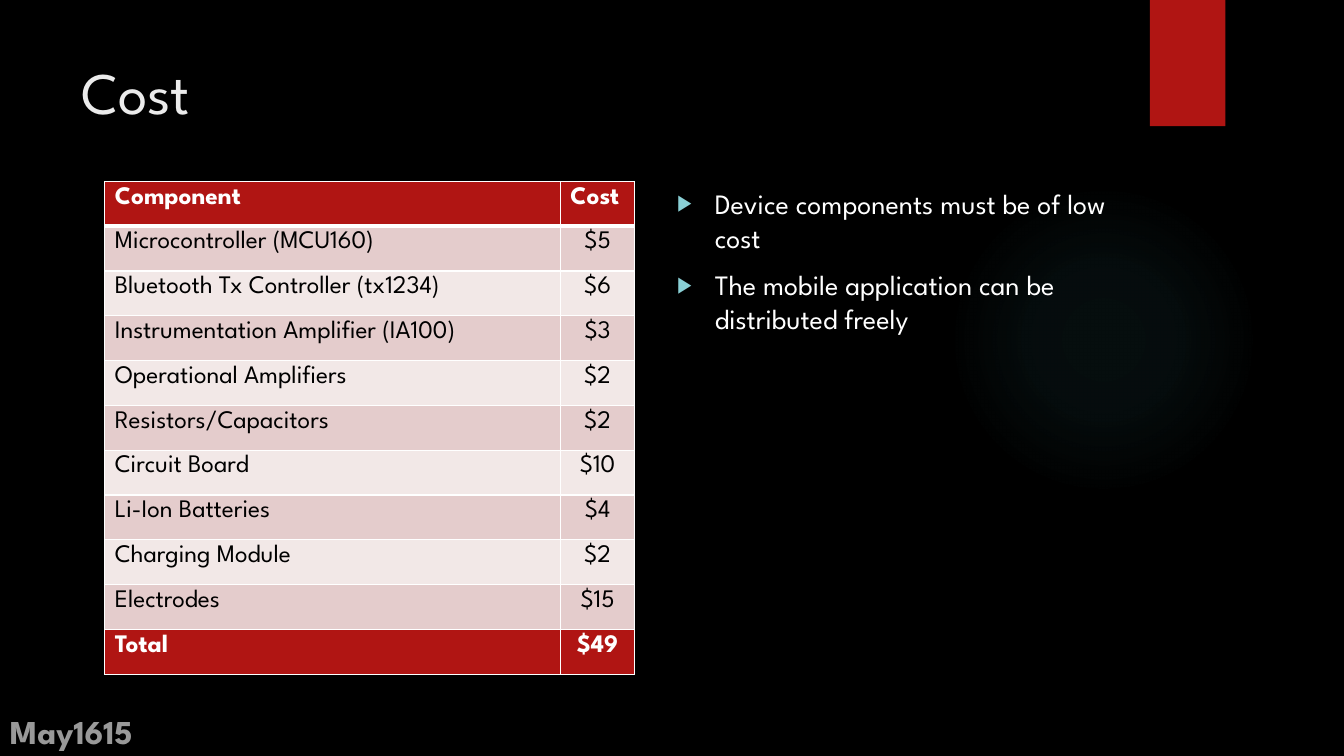
from lxml import etree
from pptx import Presentation
from pptx.dml.color import RGBColor
from pptx.enum.shapes import MSO_SHAPE as Shape
from pptx.enum.text import MSO_ANCHOR as Anchor, MSO_AUTO_SIZE as AutoSize, PP_ALIGN as Align
from pptx.oxml import parse_xml
from pptx.oxml.ns import nsdecls, qn
from pptx.util import Cm, Pt

# Content
TITLE = "Cost"
POINTS = [
    "Device components must be of low cost",
    "The mobile application can be distributed freely",
]
TEAM = "May1615"
HEADER = ("Component", "Cost")
COSTS = [
    ("Microcontroller (MCU160)", 5),
    ("Bluetooth Tx Controller (tx1234)", 6),
    ("Instrumentation Amplifier (IA100)", 3),
    ("Operational Amplifiers", 2),
    ("Resistors/Capacitors", 2),
    ("Circuit Board", 10),
    ("Li-Ion Batteries", 4),
    ("Charging Module", 2),
    ("Electrodes", 15),
]
TOTAL = sum(cost for _, cost in COSTS)
ROWS = [HEADER, *((name, f"${cost}") for name, cost in COSTS), ("Total", f"${TOTAL}")]

# Style
FONT = "League Spartan"
BLACK, WHITE, RED = "000000", "FFFFFF", "B01513"
BANDS = ("F2E8E7", "E4CCCC")
TABLE_TOP, ROW_HEIGHT = 4.57, 1.13
COLUMN_WIDTHS = (11.48, 1.88)


def colour(code):
    return RGBColor.from_string(code)


def place(shape, left, top, width, height):
    shape.left, shape.top = Cm(left), Cm(top)
    shape.width, shape.height = Cm(width), Cm(height)


def style(para, size, code, bold=False):
    for span in para.runs:
        span.font.name = FONT
        span.font.size = Pt(size)
        span.font.bold = bold
        span.font.color.rgb = colour(code)


def add_bullet(para):
    props = para._p.get_or_add_pPr()
    props.set("marL", str(Cm(0.95)))
    props.set("indent", str(-Cm(0.95)))
    for xml in (
        f'<a:buClr {nsdecls("a")}><a:srgbClr val="8AD0D6"/></a:buClr>',
        f'<a:buSzPct {nsdecls("a")} val="80000"/>',
        f'<a:buChar {nsdecls("a")} char="▶"/>',
    ):
        props.append(parse_xml(xml))


def add_border(cell, side, points):
    cell._tc.get_or_add_tcPr().append(parse_xml(
        f'<a:ln{side} {nsdecls("a")} w="{Pt(points)}"><a:solidFill>'
        f'<a:srgbClr val="{WHITE}"/></a:solidFill></a:ln{side}>'))


def add_decoration(page, kind, *position):
    shape = page.shapes.add_shape(kind, 0, 0, 0, 0)
    place(shape, *position)
    shape.shadow.inherit = False
    shape.line.fill.background()
    return shape


deck = Presentation()
deck.slide_width, deck.slide_height = Cm(33.87), Cm(19.05)
page = deck.slides.add_slide(deck.slide_layouts[1])
page.background.fill.solid()
page.background.fill.fore_color.rgb = colour(BLACK)

# Glow and red flag, behind everything else
glow = add_decoration(page, Shape.OVAL, 23.9, 4.65, 7.82, 7.82)
stops = "".join(
    f'<a:gs pos="{place_pct * 1000}"><a:srgbClr val="50B9C1">'
    f'<a:alpha val="{alpha * 1000}"/></a:srgbClr></a:gs>'
    for place_pct, alpha in ((0, 7), (36, 6), (69, 0)))
glow._element.spPr.find(qn("a:prstGeom")).addnext(parse_xml(
    f'<a:gradFill {nsdecls("a")}><a:gsLst>{stops}</a:gsLst><a:path path="circle">'
    '<a:fillToRect l="50000" t="50000" r="50000" b="50000"/></a:path></a:gradFill>'))
flag = add_decoration(page, Shape.RECTANGLE, 28.98, 0, 1.9, 3.18)
flag.fill.solid()
flag.fill.fore_color.rgb = colour(RED)
for shape in (flag, glow):
    page.shapes._spTree.insert(2, shape._element)

# Title
title = page.shapes.title
place(title, 1.8, 1.27, 26.14, 3.89)
title.text_frame.text = TITLE
title.text_frame.vertical_anchor = Anchor.TOP
title.text_frame.auto_size = AutoSize.NONE
title.text_frame.paragraphs[0].alignment = Align.LEFT
style(title.text_frame.paragraphs[0], 42, "EBEBEB")

# Bulleted points
body = page.placeholders[1]
place(body, 16.81, TABLE_TOP, 12.55, 11.66)
body.text_frame.text = "\n".join(POINTS)
body.text_frame.auto_size = AutoSize.NONE
for number, para in enumerate(body.text_frame.paragraphs):
    add_bullet(para)
    para.space_before = Pt(10 if number else 0)
    style(para, 20, WHITE)

# Team name
team = page.shapes.add_textbox(Cm(0), Cm(17.35), Cm(5.92), Cm(1.7)).text_frame
team.word_wrap = True
team.vertical_anchor = Anchor.BOTTOM
team.text = TEAM
style(team.paragraphs[0], 24, WHITE, bold=True)
for code in team._txBody.iter(qn("a:srgbClr")):
    etree.SubElement(code, qn("a:alpha")).set("val", "60000")

# Cost table
table = page.shapes.add_table(
    len(ROWS), len(HEADER), Cm(2.64), Cm(TABLE_TOP),
    Cm(sum(COLUMN_WIDTHS)), Cm(ROW_HEIGHT * len(ROWS))).table
for column, width in zip(table.columns, COLUMN_WIDTHS):
    column.width = Cm(width)
last = len(ROWS) - 1
for r, row in enumerate(ROWS):
    table.rows[r].height = Cm(ROW_HEIGHT)
    strong = r in (0, last)
    for c, text in enumerate(row):
        cell = table.cell(r, c)
        for side in "LRTB":
            thick = (r, side) in ((0, "B"), (1, "T"))
            add_border(cell, side, 3 if thick else 1)
        cell.fill.solid()
        cell.fill.fore_color.rgb = colour(RED if strong else BANDS[r % 2])
        cell.text_frame.text = text
        para = cell.text_frame.paragraphs[0]
        para.alignment = Align.CENTER if r and c else Align.LEFT
        style(para, 18, WHITE if strong else BLACK, strong)

deck.save("out.pptx")
